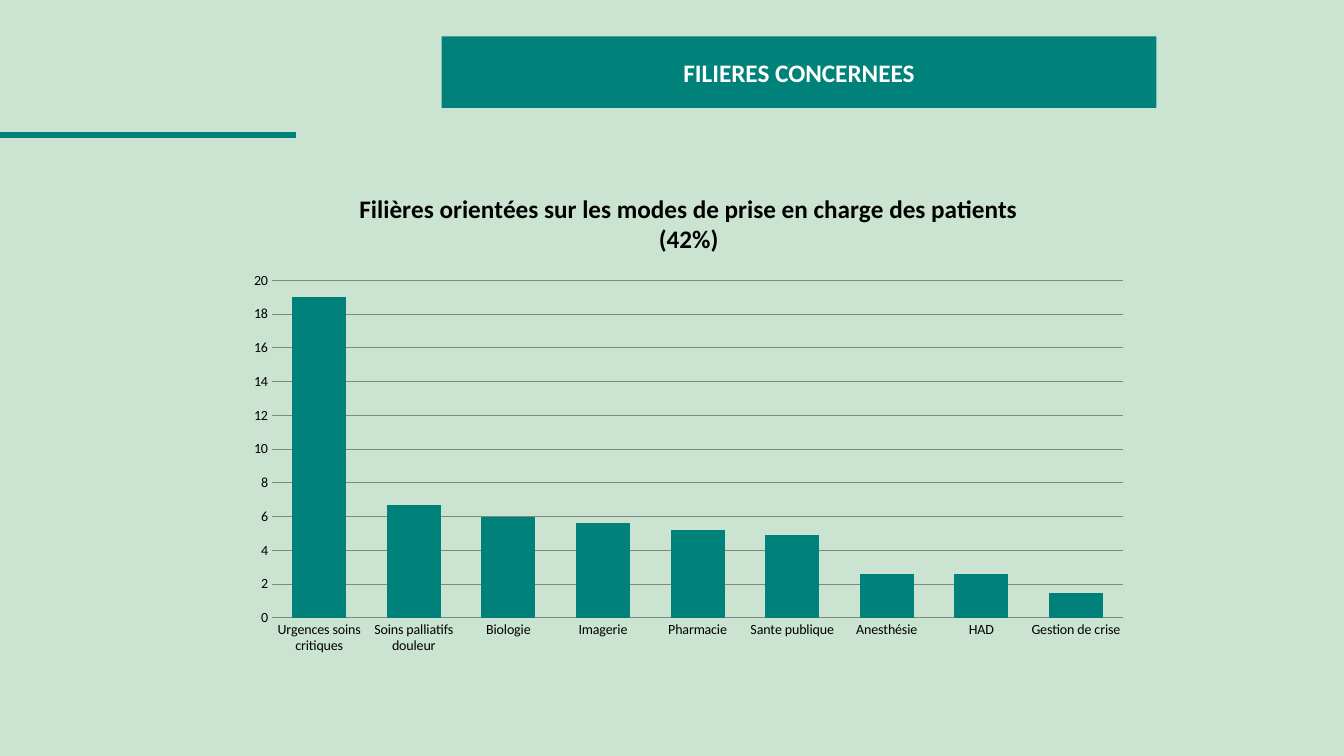
from pptx import Presentation
from pptx.chart.data import CategoryChartData
from pptx.dml.color import RGBColor
from pptx.enum import chart as chart_enum, shapes, text
from pptx.oxml import ns, xmlchemy
from pptx.util import Inches, Pt

COLORS = {"background": "CBE4D1", "teal": "00827A", "white": "FFFFFF",
          "black": "000000", "grid": "868686"}
FONT = "Calibri"
CHART_TITLE = "Filières orientées sur les modes de prise en charge des patients (42%)"
FILIERES = {
    "Urgences soins critiques": 19,
    "Soins palliatifs douleur": 6.7,
    "Biologie": 6,
    "Imagerie": 5.6,
    "Pharmacie": 5.2,
    "Sante publique": 4.9,
    "Anesthésie": 2.6,
    "HAD": 2.6,
    "Gestion de crise": 1.5,
}


def color(name):
    return RGBColor.from_string(COLORS[name])


def set_attributes(target, values):
    for name, value in values.items():
        setattr(target, name, value)


def fill_solid(fill, color_name):
    fill.solid()
    fill.fore_color.rgb = color(color_name)


def format_font(font, size, color_name, bold=False):
    set_attributes(font, {"name": FONT, "size": Pt(size), "bold": bold})
    font.color.rgb = color(color_name)


def format_line(line, color_name, width):
    line.color.rgb = color(color_name)
    line.width = Pt(width)


def add_title_band(slide, title_text):
    title = slide.shapes.title
    set_attributes(title, {"left": Inches(4.38), "top": Inches(0.36),
                           "width": Inches(7.09), "height": Inches(0.71)})
    fill_solid(title.fill, "teal")
    frame = title.text_frame
    frame.text = title_text
    set_attributes(frame, {"word_wrap": True, "auto_size": text.MSO_AUTO_SIZE.NONE,
                           "vertical_anchor": text.MSO_ANCHOR.MIDDLE})
    paragraph = frame.paragraphs[0]
    paragraph.alignment = text.PP_ALIGN.CENTER
    format_font(paragraph.font, 18, "white", bold=True)


def add_rule(slide, length, top):
    rule = slide.shapes.add_connector(
        shapes.MSO_CONNECTOR.STRAIGHT, 0, Inches(top), Inches(length), Inches(top))
    format_line(rule.line, "teal", 4)
    rule._element.spPr.append(xmlchemy.OxmlElement("a:effectLst"))


def format_axes(chart):
    for axis in (chart.category_axis, chart.value_axis):
        set_attributes(axis, {"major_tick_mark": chart_enum.XL_TICK_MARK.NONE,
                              "minor_tick_mark": chart_enum.XL_TICK_MARK.NONE})
        format_font(axis.tick_labels.font, 10, "black")
    format_line(chart.category_axis.format.line, "grid", 0.75)
    value_axis = chart.value_axis
    set_attributes(value_axis, {"minimum_scale": 0, "maximum_scale": 20,
                                "major_unit": 2, "has_major_gridlines": True})
    value_axis.format.line.fill.background()
    format_line(value_axis.major_gridlines.format.line, "grid", 0.75)
    set_attributes(value_axis.tick_labels, {"number_format": "0",
                                            "number_format_is_linked": False})


def add_column_chart(slide, chart_title, values):
    data = CategoryChartData()
    data.categories = list(values)
    data.add_series("Series 1", list(values.values()))
    chart = slide.shapes.add_chart(
        chart_enum.XL_CHART_TYPE.COLUMN_CLUSTERED, Inches(2.34), Inches(1.7),
        Inches(8.98), Inches(4.88), data).chart
    chart.has_legend = False
    format_font(chart.font, 10, "black")
    title_frame = chart.chart_title.text_frame
    title_frame.text = chart_title
    format_font(title_frame.paragraphs[0].runs[0].font, 18, "black", bold=True)
    format_axes(chart)
    plot = chart.plots[0]
    set_attributes(plot, {"gap_width": 75, "overlap": -25, "vary_by_categories": False})
    fill_solid(plot.series[0].format.fill, "teal")


def main():
    presentation = Presentation()
    set_attributes(presentation, {"slide_width": Inches(13.33),
                                  "slide_height": Inches(7.5)})
    slide = presentation.slides.add_slide(
        presentation.slide_layouts.get_by_name("Title Only"))
    fill_solid(slide.background.fill, "background")
    add_rule(slide, length=2.94, top=1.34)
    add_title_band(slide, "FILIERES CONCERNEES")
    add_column_chart(slide, CHART_TITLE, FILIERES)
    presentation.save("out.pptx")


if __name__ == "__main__":
    main()
